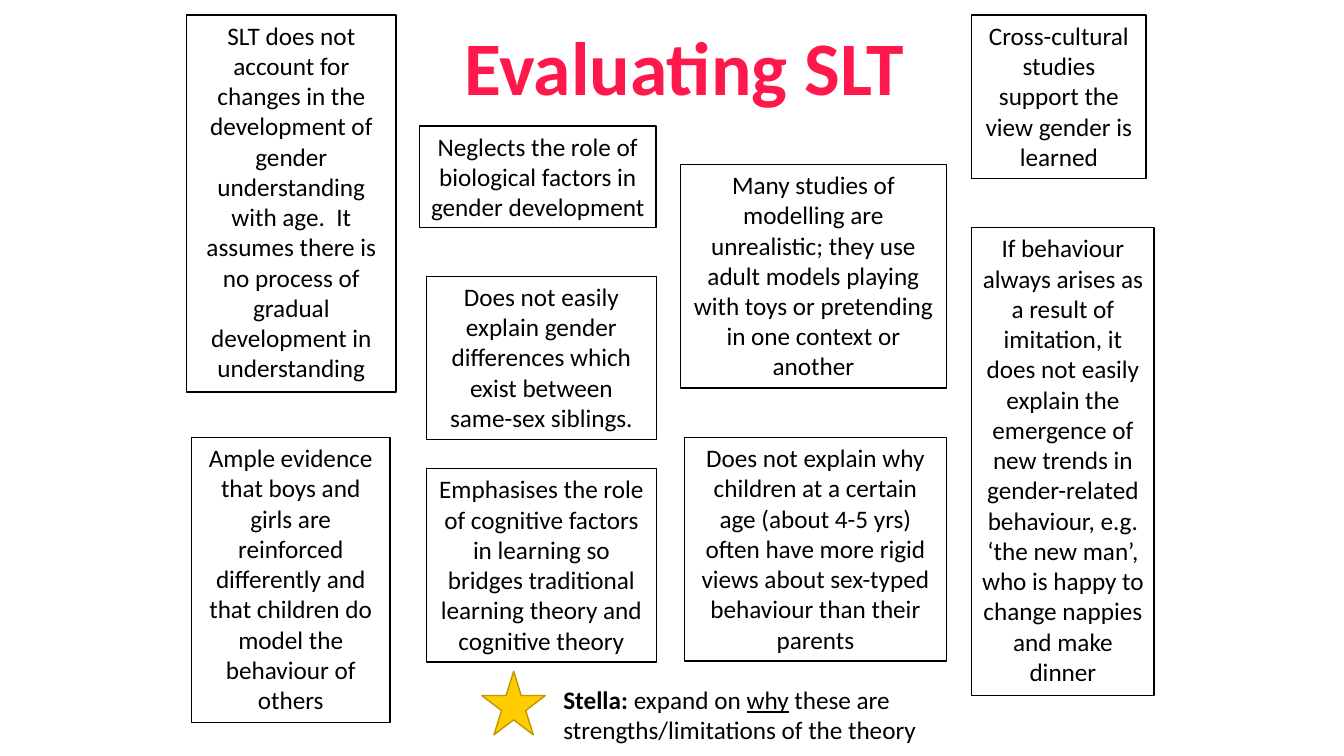
"""Build the slide that evaluates social learning theory of gender."""
from pptx import Presentation
from pptx import util as u
from pptx.dml.color import RGBColor
from pptx.enum import shapes, text

FONT = "Calibri"
COLORS = {"ink": "000000", "paper": "FFFFFF", "title": "FF184B",
          "star": "FFCC00", "star_edge": "BD9700"}
TOP, LOWER = 10.8, 312.5
LEFT_MID, RIGHT = 304.6, 694.1

POINTS = [
    (133.2, TOP, 149.8, 269.3,
     "SLT does not account for changes in the development of gender "
     "understanding with age.  It assumes there is no process of gradual "
     "development in understanding"),
    (486, 117.4, 190.1, 159.8,
     "Many studies of modelling are unrealistic; they use adult models "
     "playing with toys or pretending in one context or another"),
    (RIGHT, 162.7, 130.3, 334.1,
     "If behaviour always arises as a result of imitation, it does not easily "
     "explain the emergence of new trends in gender-related behaviour, e.g. "
     "‘the new man’, who is happy to change nappies and make dinner"),
    (LEFT_MID, 197.3, 164.2, 116.6,
     "Does not easily explain gender differences which exist between "
     "same-sex siblings."),
    (488.9, LOWER, 187.2, 159.8,
     "Does not explain why children at a certain age (about 4-5 yrs) often "
     "have more rigid views about sex-typed behaviour than their parents"),
    (299.5, 90, 169.2, 72.7,
     "Neglects the role of biological factors in gender development"),
    (136.8, LOWER, 141.8, 203.8,
     "Ample evidence that boys and girls are reinforced differently and that "
     "children do model the behaviour of others"),
    (LEFT_MID, 334.8, 164.2, 138.2,
     "Emphasises the role of cognitive factors in learning so bridges "
     "traditional learning theory and cognitive theory"),
    (RIGHT, TOP, 124.6, 116.6,
     "Cross-cultural studies support the view gender is learned"),
]


def color(name):
    return RGBColor.from_string(COLORS[name])


def add_run(p, words, size=18, ink="ink", bold=False, underline=False):
    r = p.add_run()
    r.text = words
    r.font.name, r.font.size = FONT, u.Pt(size)
    r.font.bold, r.font.underline = bold, underline
    r.font.color.rgb = color(ink)


def set_frame(sp, align, wrap=True):
    tf = sp.text_frame
    tf.word_wrap = wrap
    tf.auto_size = text.MSO_AUTO_SIZE.SHAPE_TO_FIT_TEXT
    tf.vertical_anchor = text.MSO_ANCHOR.TOP
    p = tf.paragraphs[0]
    p.alignment = align
    return p


def add_figure(s, kind, box, fill, edge):
    sp = s.shapes.add_shape(kind, *map(u.Pt, box))
    sp.shadow.inherit = False
    sp.fill.solid()
    sp.fill.fore_color.rgb = color(fill)
    sp.line.color.rgb = color(edge)
    sp.line.width = u.Pt(1)
    return sp


def add_point(s, box, words):
    sp = add_figure(s, shapes.MSO_SHAPE.RECTANGLE, box, "paper", "ink")
    add_run(set_frame(sp, text.PP_ALIGN.CENTER), words)


def add_title(s, box, words):
    sp = s.shapes.title
    sp.left, sp.top, sp.width, sp.height = map(u.Pt, box)
    p = set_frame(sp, text.PP_ALIGN.CENTER, wrap=False)
    add_run(p, words, size=54, ink="title", bold=True)


def add_task(s, box):
    sp = s.shapes.add_textbox(*map(u.Pt, box))
    p = set_frame(sp, text.PP_ALIGN.LEFT)
    add_run(p, "Stella:", bold=True)
    add_run(p, " expand on ")
    add_run(p, "why", underline=True)
    add_run(p, " these are strengths/limitations of the theory")


def main():
    prs = Presentation()
    prs.slide_width, prs.slide_height = u.Pt(960), u.Pt(540)
    s = prs.slides.add_slide(prs.slide_layouts.get_by_name("Title Only"))
    add_title(s, (322.6, TOP, 332.6, 72.7), "Evaluating SLT")
    for *box, words in POINTS:
        add_point(s, box, words)
    add_figure(s, shapes.MSO_SHAPE.STAR_5_POINT, (344.2, 479.5, 45.4, 45.4),
               "star", "star_edge")
    add_task(s, (395.3, 485.3, 339.1, 51.1))
    prs.save("out.pptx")


if __name__ == "__main__":
    main()
